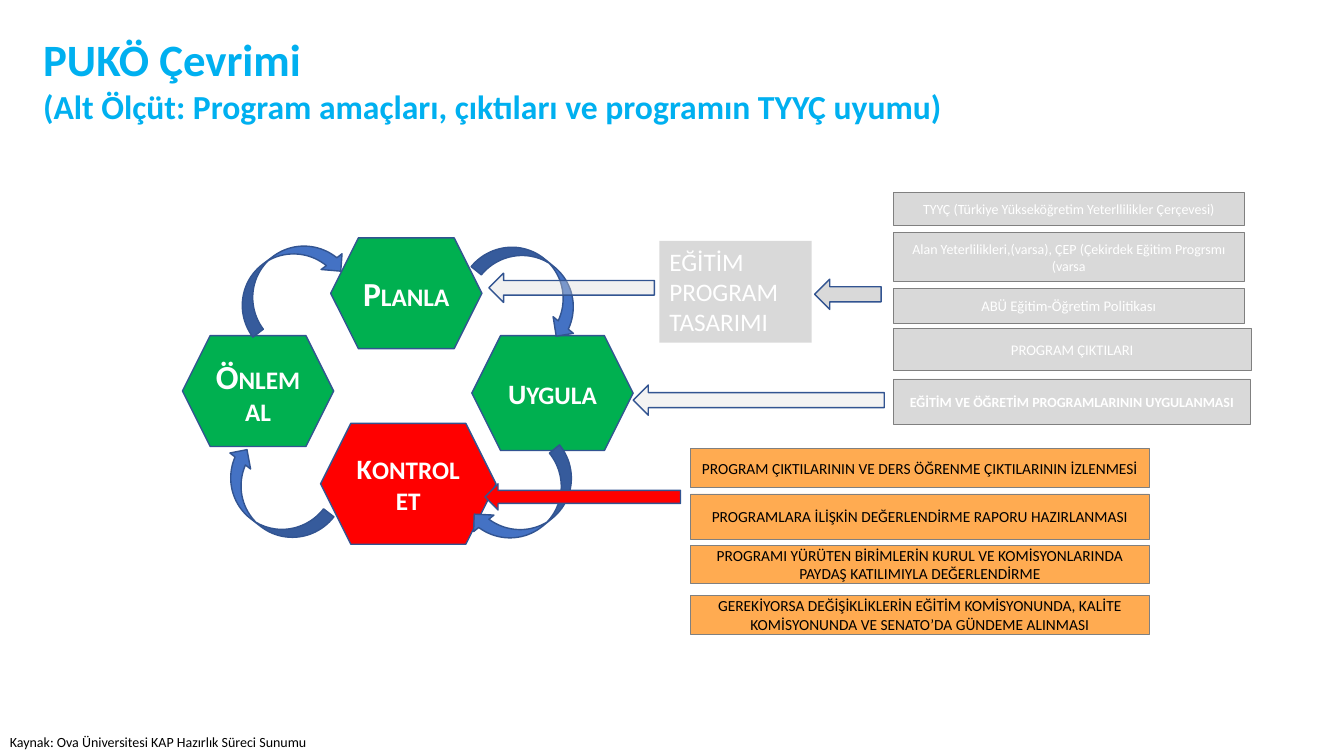
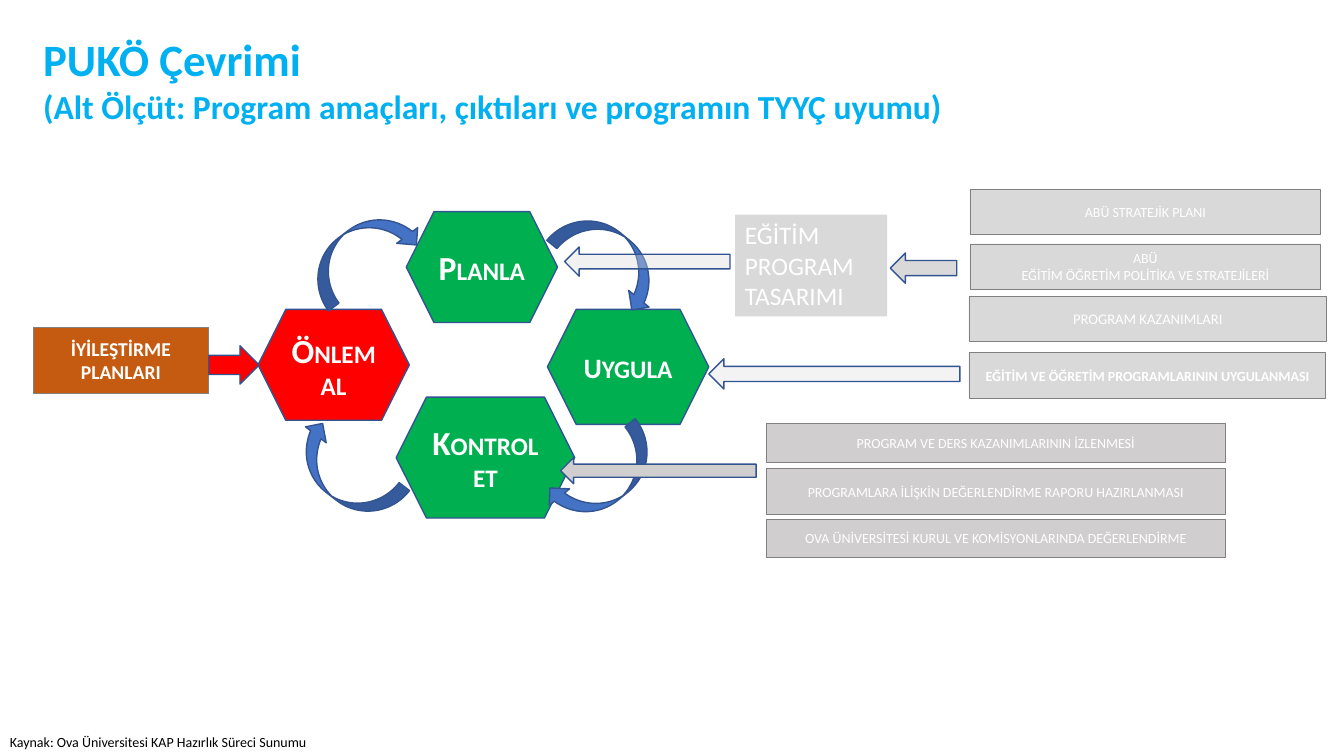
"""Build two slides on the plan, do, check and act cycle."""
from lxml.etree import SubElement as SubEl
from pptx import Presentation
from pptx.dml.color import RGBColor as RGB
from pptx.enum.shapes import MSO_SHAPE as Kind
from pptx.enum.text import MSO_ANCHOR as Anchor, MSO_AUTO_SIZE as Fit, PP_ALIGN as Align
from pptx.oxml.ns import qn
from pptx.util import Inches, Pt

SKY = RGB(0x00, 0xB0, 0xF0)
GREEN = RGB(0x00, 0xB0, 0x50)
RED = RGB(0xFF, 0x00, 0x00)
BLUE = RGB(0x44, 0x72, 0xC4)
NAVY = RGB(0x32, 0x54, 0x91)
PALE = RGB(0xD9, 0xD9, 0xD9)
GREY = RGB(0xD0, 0xCE, 0xCE)
EDGE = RGB(0x80, 0x80, 0x80)
AMBER = RGB(0xFF, 0xAB, 0x51)
BROWN = RGB(0xC5, 0x5A, 0x11)
WHITE = RGB(0xFF, 0xFF, 0xFF)
BLACK = RGB(0x00, 0x00, 0x00)
FONT = "Calibri"

TITLE = "PUKÖ Çevrimi\n(Alt Ölçüt: Program amaçları, çıktıları ve programın TYYÇ uyumu)"
SOURCE = "Kaynak: Ova Üniversitesi KAP Hazırlık Süreci Sunumu"

CURVES = [
    (4.7, 2.57, 39.3),
    (4.63, 4.74, 140.9),
    (2.06, 4.7, 217.7),
    (2.23, 2.51, 323.1),
]


def style(run, size, color, bold=False):
    """Set the font of a run."""
    font = run.font
    font.name, font.size, font.bold = FONT, Pt(size), bold
    font.color.rgb = color


def write(frame, text, sizes, color, bold=False, align=Align.LEFT):
    """Fill a frame, with one size for each paragraph."""
    frame.word_wrap = True
    frame.text = text
    for para, size in zip(frame.paragraphs, sizes):
        para.alignment = align
        for run in para.runs:
            style(run, size, color, bold)


def label(slide, box, text, sizes, color, bold=False):
    """Add a text box that grows with its text."""
    frame = slide.shapes.add_textbox(*map(Inches, box)).text_frame
    write(frame, text, sizes, color, bold)
    frame.auto_size = Fit.SHAPE_TO_FIT_TEXT


def block(slide, kind, box, fill, line=NAVY, width=1):
    """Add a flat shape with an optional outline."""
    shape = slide.shapes.add_shape(kind, *map(Inches, box))
    shape.shadow.inherit = False
    shape.fill.solid()
    shape.fill.fore_color.rgb = fill
    if line is None:
        shape.line.fill.background()
    else:
        shape.line.color.rgb = line
        shape.line.width = Pt(width)
    return shape


def arrow(slide, box, fill, alpha=100, turn=0):
    """Add a left arrow, see-through when alpha is below 100."""
    shape = block(slide, Kind.LEFT_ARROW, box, fill)
    shape.rotation = turn
    if alpha < 100:
        tint = shape.element.spPr.find(qn("a:solidFill")).find(qn("a:srgbClr"))
        SubEl(tint, qn("a:alpha")).set("val", str(alpha * 1000))


def bar(slide, box, text, fill=PALE, size=10, color=WHITE, bold=False):
    """Add a framed bar with centred text."""
    frame = block(slide, Kind.RECTANGLE, box, fill, EDGE, 0.5).text_frame
    frame.vertical_anchor = Anchor.MIDDLE
    write(frame, text, [size] * (text.count("\n") + 1), color, bold, Align.CENTER)


def stack(slide, left, width, rows, **look):
    """Add bars in one column from (top, height, text) rows."""
    for top, high, text in rows:
        bar(slide, (left, top, width, high), text, **look)


def node(slide, box, text, size, fill):
    """Add a hexagon whose first letter has its own size."""
    frame = block(slide, Kind.HEXAGON, box, fill).text_frame
    frame.vertical_anchor = Anchor.MIDDLE
    write(frame, text[0], [size], WHITE, True, Align.CENTER)
    rest = frame.paragraphs[0].add_run()
    rest.text = text[1:]
    style(rest, 18, WHITE, True)


def cycle(slide, hot, beam, check, dx=0, dy=0):
    """Draw the cycle and its inputs, moved by dx and dy."""
    def at(left, top, width, high):
        return left + dx, top + dy, width, high

    size, width = check
    nodes = [
        ((3.28, 2.36, 1.5, 1.1), "PLANLA", 24),
        ((4.68, 3.33, 1.6, 1.14), "UYGULA", 20),
        ((3.18, 4.2, width, 1.2), "KONTROL ET", size),
        ((1.81, 3.33, 1.5, 1.1), "ÖNLEM AL", 24),
    ]
    for box, text, big in nodes:
        node(slide, at(*box), text, big, RED if text == hot else GREEN)
    for left, top, turn in CURVES:
        curve = block(slide, Kind.CURVED_DOWN_ARROW, at(left, top, 1.22, 0.52), BLUE)
        curve.rotation = turn

    plan = block(slide, Kind.RECTANGLE, at(6.54, 2.39, 1.51, 1.01), PALE, None)
    plan.text_frame.vertical_anchor = Anchor.TOP
    write(plan.text_frame, "EĞİTİM PROGRAM TASARIMI", [18], WHITE)
    arrow(slide, at(8.08, 2.77, 0.66, 0.3), PALE)
    arrow(slide, at(4.85, 2.71, 1.64, 0.29), PALE, 36)
    bar(slide, at(8.86, 3.76, 3.54, 0.45),
        "EĞİTİM VE ÖĞRETİM PROGRAMLARININ UYGULANMASI", bold=True)
    arrow(slide, at(6.28, 3.82, 2.49, 0.3), GREY, 24)
    arrow(slide, at(4.81, 4.8, 1.94, 0.26), beam)


def start(deck):
    """Add a blank slide with the shared title and source."""
    slide = deck.slides.add_slide(deck.slide_layouts[6])
    label(slide, (0.33, 0.27, 11.63, 1.04), TITLE, [32, 24], SKY, True)
    label(slide, (0, 7.23, 6.33, 0.27), SOURCE, [10], BLACK)
    return slide


def control(deck):
    """Build the slide on the check step."""
    slide = start(deck)
    cycle(slide, "KONTROL ET", RED, (20, 1.74))
    stack(slide, 8.86, 3.48, [
        (1.91, 0.33, "TYYÇ (Türkiye Yükseköğretim Yeterllilikler Çerçevesi)"),
        (2.31, 0.48, "Alan Yeterlilikleri,(varsa), ÇEP (Çekirdek Eğitim Progrsmı (varsa"),
    ])
    bar(slide, (8.86, 2.86, 3.48, 0.35), "ABÜ Eğitim-Öğretim Politikası", size=10.5)
    bar(slide, (8.86, 3.26, 3.55, 0.41), "PROGRAM ÇIKTILARI", size=10.5)
    stack(slide, 6.85, 4.55, [
        (4.45, 0.39, "PROGRAM ÇIKTILARININ VE DERS ÖĞRENME ÇIKTILARININ İZLENMESİ"),
        (4.9, 0.45, "PROGRAMLARA İLİŞKİN DEĞERLENDİRME RAPORU HAZIRLANMASI"),
        (5.41, 0.38, "PROGRAMI YÜRÜTEN BİRİMLERİN KURUL VE KOMİSYONLARINDA "
                     "PAYDAŞ KATILIMIYLA DEĞERLENDİRME"),
        (5.91, 0.38, "GEREKİYORSA DEĞİŞİKLİKLERİN EĞİTİM KOMİSYONUNDA, KALİTE "
                     "KOMİSYONUNDA VE SENATO’DA GÜNDEME ALINMASI"),
    ], fill=AMBER, size=11, color=BLACK)


def improve(deck):
    """Build the slide on the act step."""
    slide = start(deck)
    cycle(slide, "ÖNLEM AL", GREY, (24, 1.77), 0.75, -0.26)
    stack(slide, 9.62, 3.48, [
        (1.88, 0.45, "ABÜ STRATEJİK PLANI"),
        (2.42, 0.45, "ABÜ\nEĞİTİM ÖĞRETİM POLİTİKA VE STRATEJİLERİ"),
    ])
    bar(slide, (9.61, 2.94, 3.55, 0.45), "PROGRAM KAZANIMLARI", size=10.5)
    stack(slide, 7.6, 4.55, [
        (4.2, 0.39, "PROGRAM VE DERS KAZANIMLARININ İZLENMESİ"),
        (4.65, 0.45, "PROGRAMLARA İLİŞKİN DEĞERLENDİRME RAPORU HAZIRLANMASI"),
        (5.15, 0.38, "OVA ÜNİVERSİTESİ KURUL VE KOMİSYONLARINDA DEĞERLENDİRME"),
    ], fill=GREY)
    bar(slide, (0.33, 3.25, 1.74, 0.65), "İYİLEŞTİRME PLANLARI", BROWN, 14, bold=True)
    arrow(slide, (2.07, 3.43, 0.5, 0.38), RED, turn=180)


def main():
    """Create and save the deck."""
    deck = Presentation()
    deck.slide_width, deck.slide_height = Inches(13.33), Inches(7.5)
    control(deck)
    improve(deck)
    deck.save("out.pptx")


if __name__ == "__main__":
    main()
